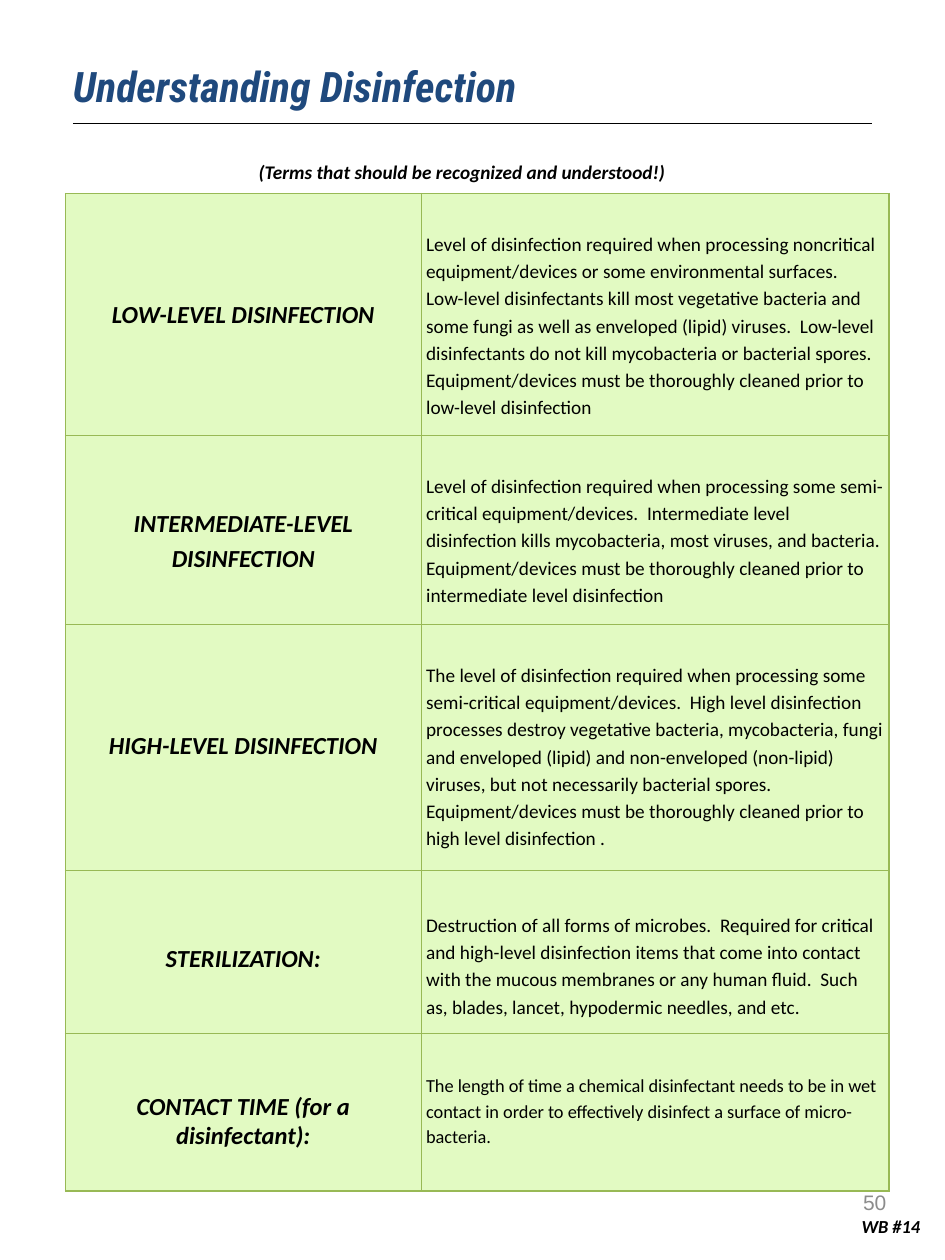
"""Build the disinfection terms slide with its table of definitions."""
from dataclasses import dataclass

from lxml import etree
from pptx import Presentation
from pptx import util as u
from pptx.dml.color import RGBColor
from pptx.enum import shapes, text
from pptx.oxml import ns

BLACK = RGBColor(0x00, 0x00, 0x00)
NAVY = RGBColor(0x1F, 0x49, 0x7D)
GRAY = RGBColor(0x8C, 0x8C, 0x8C)
PALE_GREEN = RGBColor(0xE2, 0xFA, 0xC2)
BORDER_GREEN = RGBColor(0x98, 0xB9, 0x55)
LEFT, CENTER, RIGHT = text.PP_ALIGN.LEFT, text.PP_ALIGN.CENTER, text.PP_ALIGN.RIGHT


@dataclass(frozen=True)
class Style:
    size: float
    font: str = "Calibri"
    color: RGBColor = BLACK
    emphasis: bool = True
    align: text.PP_ALIGN = LEFT
    line_spacing: float = 1.0


@dataclass(frozen=True)
class Label:
    words: str
    left: float
    top: float
    width: float
    height: float
    style: Style
    wrap: bool = True
    anchor: text.MSO_ANCHOR = text.MSO_ANCHOR.TOP


@dataclass(frozen=True)
class Term:
    name: str
    definition: str
    height: float
    name_inset: float
    definition_inset: float = 0.72
    definition_size: float = 11
    name_spacing: float = 1.15


LABELS = [
    Label("50", 13.67, 23.55, 4.45, 1.35, Style(12, "Arial", GRAY, False, RIGHT),
          anchor=text.MSO_ANCHOR.MIDDLE),
    Label("(Terms that should be recognized and understood!)", 2.92, 3.1, 12.8, 0.74,
          Style(11, align=CENTER)),
    Label("Understanding Disinfection", 1.22, 1.09, 11.91, 1.27,
          Style(24, "Roboto Condensed", NAVY), wrap=False),
    Label("WB #14", 17.12, 24.38, 2.01, 0.74, Style(10.5)),
]

TERMS = [
    Term("LOW-LEVEL DISINFECTION",
         "Level of disinfection required when processing noncritical equipment/devices or some "
         "environmental surfaces.  Low-level disinfectants kill most vegetative bacteria and some "
         "fungi as well as enveloped (lipid) viruses.  Low-level disinfectants do not kill "
         "mycobacteria or bacterial spores.  Equipment/devices must be thoroughly cleaned prior to "
         "low-level disinfection", 4.88, 2.06),
    Term("INTERMEDIATE-LEVEL DISINFECTION",
         "Level of disinfection required when processing some semi-critical equipment/devices.  "
         "Intermediate level disinfection kills mycobacteria, most viruses, and bacteria. "
         "Equipment/devices must be thoroughly cleaned prior to intermediate level disinfection",
         3.81, 1.4),
    Term("HIGH-LEVEL DISINFECTION",
         "The level of disinfection required when processing some semi-critical equipment/devices.  "
         "High level disinfection processes destroy vegetative bacteria, mycobacteria, fungi and "
         "enveloped (lipid) and non-enveloped (non-lipid) viruses, but not necessarily bacterial "
         "spores.  Equipment/devices must be thoroughly cleaned prior to high level disinfection .",
         4.95, 2.06),
    Term("STERILIZATION:",
         "Destruction of all forms of microbes.  Required for critical and high-level disinfection "
         "items that come into contact with the mucous membranes or any human fluid.  Such as, "
         "blades, lancet, hypodermic needles, and etc.", 3.29, 1.4, 0.81),
    Term("CONTACT TIME (for a disinfectant):",
         "The length of time a chemical disinfectant needs to be in wet contact in order to "
         "effectively disinfect a surface of micro-bacteria.", 3.18, 1.18, 0.78, 10.5, 1.0),
]


def write(frame, words: str, style: Style) -> None:
    """Put one styled paragraph into a text frame."""
    paragraph = frame.paragraphs[0]
    paragraph.text = words
    paragraph.alignment = style.align
    paragraph.line_spacing = style.line_spacing
    font = paragraph.font
    font.name, font.size = style.font, u.Pt(style.size)
    font.bold = font.italic = style.emphasis
    font.color.rgb = style.color


def add_label(slide, label: Label) -> None:
    """Add a text box."""
    box = slide.shapes.add_textbox(u.Cm(label.left), u.Cm(label.top),
                                   u.Cm(label.width), u.Cm(label.height))
    box.text_frame.word_wrap = label.wrap
    box.text_frame.vertical_anchor = label.anchor
    write(box.text_frame, label.words, label.style)


def add_title_rule(slide) -> None:
    """Add the thin line under the title."""
    rule = slide.shapes.add_connector(shapes.MSO_CONNECTOR.STRAIGHT, u.Cm(1.47), u.Cm(2.49),
                                      u.Cm(17.58), u.Cm(2.49))
    rule.line.color.rgb = BLACK
    rule.line.width = u.Pt(0.75)
    etree.SubElement(rule.element.spPr, ns.qn("a:effectLst"))


def add_borders(cell) -> None:
    """Draw the four green edges of a cell."""
    properties = cell._tc.get_or_add_tcPr()
    for position, side in enumerate(("lnL", "lnR", "lnT", "lnB")):
        edge = etree.Element(ns.qn(f"a:{side}"), w=str(u.Pt(0.75)))
        fill = etree.SubElement(edge, ns.qn("a:solidFill"))
        etree.SubElement(fill, ns.qn("a:srgbClr"), val=str(BORDER_GREEN))
        properties.insert(position, edge)


def fill_cell(cell, words: str, inset: float, style: Style) -> None:
    """Format a cell and write its text below the given top inset."""
    cell.margin_left = cell.margin_right = u.Cm(0.1)
    cell.margin_top, cell.margin_bottom = u.Cm(inset), u.Cm(0.05)
    cell.fill.solid()
    cell.fill.fore_color.rgb = PALE_GREEN
    add_borders(cell)
    write(cell.text_frame, words, style)


def add_terms_table(slide, terms: list[Term]) -> None:
    """Add the table of terms and definitions."""
    height = sum(term.height for term in terms)
    table = slide.shapes.add_table(len(terms), 2, u.Cm(1.32), u.Cm(3.9),
                                   u.Cm(16.6), u.Cm(height)).table
    table.first_row = table.horz_banding = False
    for column, width in zip(table.columns, (7.17, 9.43)):
        column.width = u.Cm(width)
    for index, term in enumerate(terms):
        table.rows[index].height = u.Cm(term.height)
        fill_cell(table.cell(index, 0), term.name, term.name_inset,
                  Style(14, align=CENTER, line_spacing=term.name_spacing))
        fill_cell(table.cell(index, 1), term.definition, term.definition_inset,
                  Style(term.definition_size, emphasis=False, line_spacing=1.15))


def main() -> None:
    """Create and save the presentation."""
    presentation = Presentation()
    presentation.slide_width, presentation.slide_height = u.Cm(19.05), u.Cm(25.4)
    slide = presentation.slides.add_slide(presentation.slide_layouts[6])
    add_terms_table(slide, TERMS)
    add_title_rule(slide)
    for label in LABELS:
        add_label(slide, label)
    presentation.save("out.pptx")


if __name__ == "__main__":
    main()
